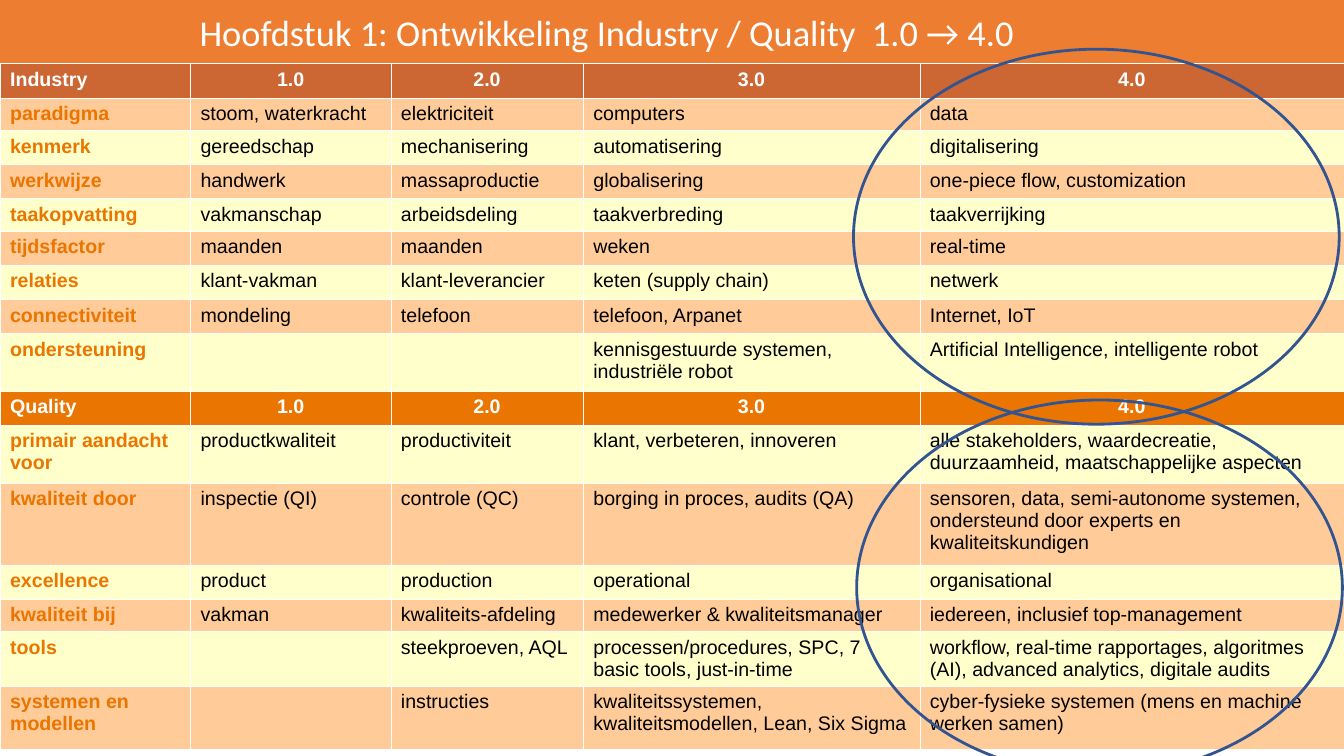
"""Build the slide on the development of Industry and Quality from 1.0 to 4.0."""
from dataclasses import dataclass

from lxml.etree import SubElement
from pptx import Presentation
from pptx.dml.color import RGBColor
from pptx.enum.shapes import MSO_SHAPE
from pptx.enum.text import MSO_ANCHOR, PP_ALIGN
from pptx.oxml.ns import qn
from pptx.util import Cm, Pt

WIDTH, HEIGHT = 33.87, 19.05
TABLE_TOP = 1.6
COLUMN_WIDTHS = (4.8, 5.05, 4.85, 8.48, 10.69)
BANNER_OUTLINE = ((0, 0), (WIDTH, 0), (WIDTH, 5.7), (27.74, 7.11), (21.84, 7.8),
                  (17, 8), (12, 7.7), (6, 7), (0, 5.92))
ORANGE, WHITE, BLACK = "EA7500", "FFFFFF", "000000"
PEACH, CREAM = "FFCC99", "FFFFCC"
VERSIONS = ("1.0", "2.0", "3.0", "4.0")


@dataclass(frozen=True)
class Topic:
    label: str
    stages: tuple
    height: float = 0.86
    header_fill: str = ""


@dataclass(frozen=True)
class Highlight:
    left: float
    top: float
    width: float = 12.24
    height: float = 9.45


TOPICS = (
    Topic("Industry", VERSIONS, header_fill="CC6633"),
    Topic("paradigma", ("stoom, waterkracht", "elektriciteit", "computers", "data"), 0.82),
    Topic("kenmerk", ("gereedschap", "mechanisering", "automatisering", "digitalisering")),
    Topic("werkwijze", ("handwerk", "massaproductie", "globalisering",
                        "one-piece flow, customization")),
    Topic("taakopvatting", ("vakmanschap", "arbeidsdeling", "taakverbreding",
                            "taakverrijking"), 0.82),
    Topic("tijdsfactor", ("maanden", "maanden", "weken", "real-time")),
    Topic("relaties", ("klant-vakman", "klant-leverancier", "keten (supply chain)",
                       "netwerk")),
    Topic("connectiviteit", ("mondeling", "telefoon", "telefoon, Arpanet", "Internet, IoT")),
    Topic("ondersteuning", ("", "", "kennisgestuurde systemen, industriële robot",
                            "Artificial Intelligence, intelligente robot"), 1.45),
    Topic("Quality", VERSIONS, header_fill=ORANGE),
    Topic("primair aandacht voor",
          ("productkwaliteit", "productiviteit", "klant, verbeteren, innoveren",
           "alle stakeholders, waardecreatie, duurzaamheid, maatschappelijke aspecten"), 1.46),
    Topic("kwaliteit door",
          ("inspectie (QI)", "controle (QC)", "borging in proces, audits (QA)",
           "sensoren, data, semi-autonome systemen, ondersteund door experts en "
           "kwaliteitskundigen"), 2.06),
    Topic("excellence", ("product", "production", "operational", "organisational")),
    Topic("kwaliteit bij", ("vakman", "kwaliteits-afdeling", "medewerker & kwaliteitsmanager",
                            "iedereen, inclusief top-management"), 0.82),
    Topic("tools",
          ("", "steekproeven, AQL", "processen/procedures, SPC, 7 basic tools, just-in-time",
           "workflow, real-time rapportages, algoritmes (AI), advanced analytics, "
           "digitale audits"), 1.38),
    Topic("systemen en modellen",
          ("", "instructies", "kwaliteitssystemen, kwaliteitsmodellen, Lean, Six Sigma",
           "cyber-fysieke systemen (mens en machine werken samen)"), 1.58),
)
HIGHLIGHTS = (Highlight(21.51, 1.24), Highlight(21.59, 10.08))


def rgb(code: str) -> RGBColor:
    return RGBColor.from_string(code)


def paint(target, color: str) -> None:
    target.fill.solid()
    target.fill.fore_color.rgb = rgb(color)


def write(frame, text: str, *, size: float = 14, font: str = "Arial", color: str = BLACK,
          bold: bool = False, align=PP_ALIGN.LEFT) -> None:
    paragraph = frame.paragraphs[0]
    paragraph.alignment = align
    paragraph.font.size = Pt(size)
    if text:
        run = paragraph.add_run()
        run.text = text
        run.font.size, run.font.name, run.font.bold = Pt(size), font, bold
        run.font.color.rgb = rgb(color)


def add_borders(cell) -> None:
    properties = cell._tc.get_or_add_tcPr()
    for position, side in enumerate(("lnL", "lnR", "lnT", "lnB")):
        border = properties.makeelement(qn(f"a:{side}"), {"w": str(Pt(0.06))})
        SubElement(SubElement(border, qn("a:solidFill")), qn("a:srgbClr"), val=WHITE)
        properties.insert(position, border)


def add_banner(slide) -> None:
    start, *rest = [(Cm(x), Cm(y)) for x, y in BANNER_OUTLINE]
    outline = slide.shapes.build_freeform(*start)
    outline.add_line_segments(rest, close=True)
    banner = outline.convert_to_shape()
    banner.shadow.inherit = False
    paint(banner, "ED7D31")
    banner.line.fill.background()


def add_title(slide) -> None:
    title = slide.shapes.add_textbox(Cm(4.78), Cm(0.05), Cm(23.22), Cm(1.5)).text_frame
    title.word_wrap = True
    title.vertical_anchor = MSO_ANCHOR.MIDDLE
    write(title, "Hoofdstuk 1: Ontwikkeling Industry / Quality  1.0 → 4.0",
          size=26, font="Calibri", color=WHITE)


def add_topics(slide) -> None:
    table = slide.shapes.add_table(
        len(TOPICS), len(COLUMN_WIDTHS), Cm(0), Cm(TABLE_TOP), Cm(WIDTH),
        Cm(sum(topic.height for topic in TOPICS))).table
    table.first_row = table.horz_banding = False
    for column, width in zip(table.columns, COLUMN_WIDTHS):
        column.width = Cm(width)
    for index, (row, topic) in enumerate(zip(table.rows, TOPICS)):
        row.height = Cm(topic.height)
        is_header = bool(topic.header_fill)
        fill = topic.header_fill or (PEACH if index % 2 else CREAM)
        for position, (cell, text) in enumerate(zip(row.cells, (topic.label, *topic.stages))):
            is_label = position == 0
            paint(cell, fill)
            add_borders(cell)
            write(cell.text_frame, text, bold=is_header or is_label,
                  color=WHITE if is_header else ORANGE if is_label else BLACK,
                  align=PP_ALIGN.CENTER if is_header and not is_label else PP_ALIGN.LEFT)


def add_highlight(slide, highlight: Highlight) -> None:
    ring = slide.shapes.add_shape(MSO_SHAPE.OVAL, Cm(highlight.left), Cm(highlight.top),
                                  Cm(highlight.width), Cm(highlight.height))
    ring.shadow.inherit = False
    ring.fill.background()
    ring.line.color.rgb = rgb("325490")
    ring.line.width = Pt(2)


def main() -> None:
    deck = Presentation()
    deck.slide_width, deck.slide_height = Cm(WIDTH), Cm(HEIGHT)
    slide = deck.slides.add_slide(deck.slide_layouts[6])
    add_banner(slide)
    add_topics(slide)
    add_title(slide)
    for highlight in HIGHLIGHTS:
        add_highlight(slide, highlight)
    deck.save("out.pptx")


if __name__ == "__main__":
    main()
